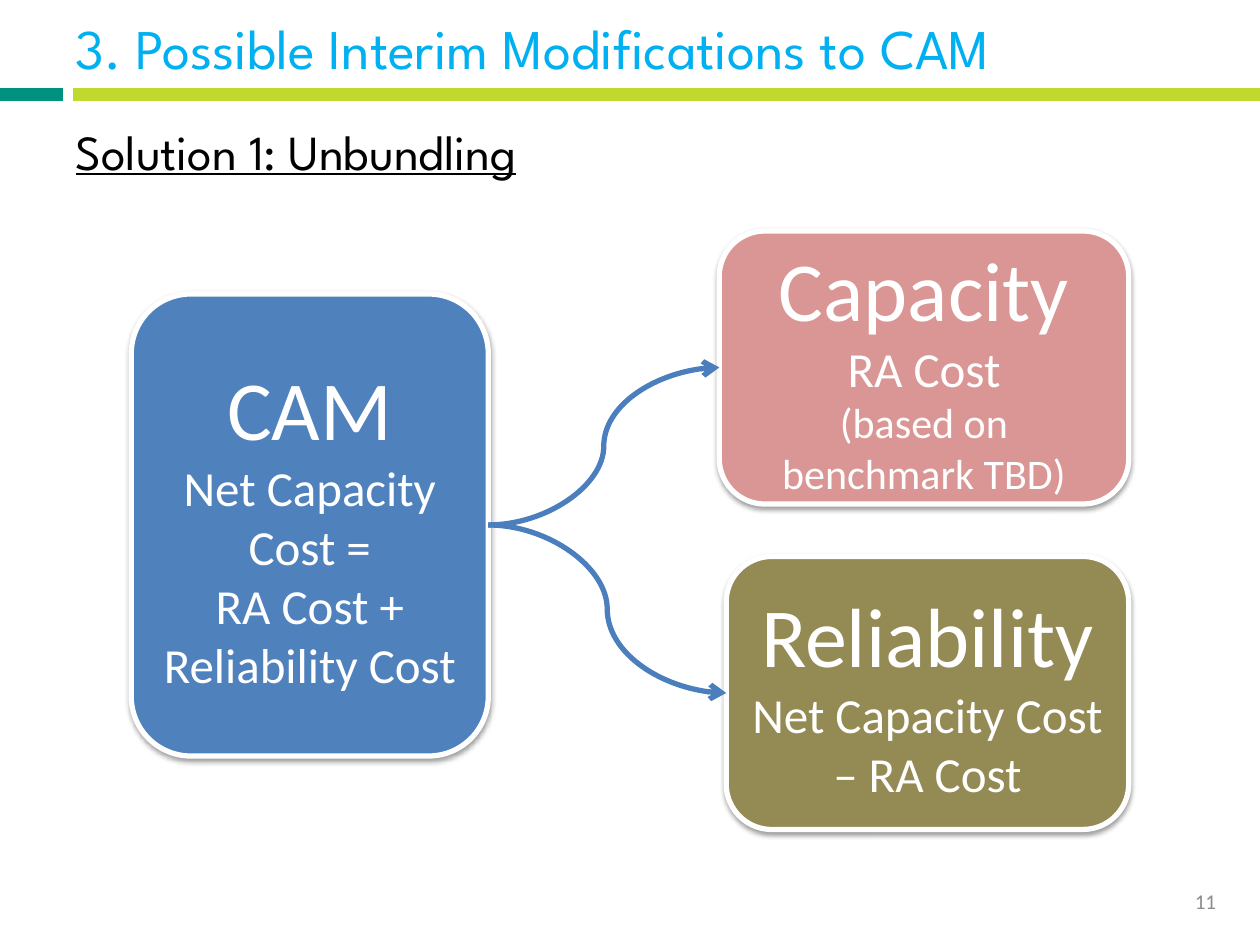
from dataclasses import dataclass

import lxml.etree
import pptx
import pptx.dml.color
import pptx.enum.shapes
import pptx.enum.text
import pptx.oxml
import pptx.oxml.ns
import pptx.util

Pt = pptx.util.Pt
qn = pptx.oxml.ns.qn
ALIGN = pptx.enum.text.PP_ALIGN
ANCHOR = pptx.enum.text.MSO_ANCHOR
CONNECTOR = pptx.enum.shapes.MSO_CONNECTOR
HEADING_FONT = "League Spartan"
WHITE = "FFFFFF"
RIGHT_SITE, LEFT_SITE = 3, 1  # connection sites of a rounded rectangle


@dataclass
class Rule:
    start: float
    end: float
    color: str


@dataclass
class CostBox:
    left: float
    top: float
    width: float
    height: float
    color: str
    lines: list[tuple[str, float]]


def rgb(color: str) -> pptx.dml.color.RGBColor:
    return pptx.dml.color.RGBColor.from_string(color)


def place(shape, left: float, top: float, width: float, height: float) -> None:
    shape.left, shape.top = Pt(left), Pt(top)
    shape.width, shape.height = Pt(width), Pt(height)


def write(paragraph, text: str, *, size: float, color: str, font: str = "Calibri",
          align=ALIGN.LEFT, underline: bool = False) -> None:
    run = paragraph.add_run()
    run.text = text
    run.font.size = Pt(size)
    run.font.name = font
    run.font.color.rgb = rgb(color)
    if underline:
        run.font.underline = True
    paragraph.alignment = align


def add_shadow(shape) -> None:
    """Soft dark shadow straight below the shape."""
    shape.shadow.inherit = False
    effects = shape._element.spPr.find(qn("a:effectLst"))
    shadow = lxml.etree.SubElement(
        effects, qn("a:outerShdw"), blurRad=str(Pt(3.1)), dist=str(Pt(1.6)),
        dir="5400000", rotWithShape="0")
    black = lxml.etree.SubElement(shadow, qn("a:srgbClr"), val="000000")
    lxml.etree.SubElement(black, qn("a:alpha"), val="38000")


def add_line(slide, kind, start: tuple[float, float], end: tuple[float, float],
             color: str, width: float):
    line = slide.shapes.add_connector(kind, *map(Pt, start + end))
    line.line.color.rgb = rgb(color)
    line.line.width = Pt(width)
    lxml.etree.SubElement(line._element.spPr, qn("a:effectLst"))
    return line


def add_cost_box(slide, box: CostBox):
    shape = slide.shapes.add_shape(
        pptx.enum.shapes.MSO_SHAPE.ROUNDED_RECTANGLE,
        Pt(box.left), Pt(box.top), Pt(box.width), Pt(box.height))
    shape.fill.solid()
    shape.fill.fore_color.rgb = rgb(box.color)
    shape.line.color.rgb = rgb(WHITE)
    shape.line.width = Pt(3)
    add_shadow(shape)
    frame = shape.text_frame
    frame.word_wrap = True
    frame.vertical_anchor = ANCHOR.MIDDLE
    for index, (text, size) in enumerate(box.lines):
        paragraph = frame.add_paragraph() if index else frame.paragraphs[0]
        write(paragraph, text, size=size, color=WHITE, align=ALIGN.CENTER)
    return shape


def add_arrow(slide, source: CostBox, source_shape, target: CostBox, target_shape) -> None:
    arrow = add_line(
        slide, CONNECTOR.CURVE,
        (source.left + source.width, source.top + source.height / 2),
        (target.left, target.top + target.height / 2), "4B7EBC", 3)
    arrow.begin_connect(source_shape, RIGHT_SITE)
    arrow.end_connect(target_shape, LEFT_SITE)
    lxml.etree.SubElement(arrow.line._get_or_add_ln(), qn("a:tailEnd"), type="arrow")


RULES = [Rule(0, 36, "00927E"), Rule(42, 720, "C1D82F")]

CAM = CostBox(75, 168, 204, 264, "4F81BD", [
    ("CAM", 48), ("Net Capacity Cost =", 28), ("RA Cost + Reliability Cost", 28)])
PARTS = [
    CostBox(411, 132, 234, 156, "D99694", [
        ("Capacity", 48), ("RA Cost", 28), ("(based on benchmark TBD)", 24)]),
    CostBox(415, 318, 230, 156, "948A54", [
        ("Reliability", 48), ("Net Capacity Cost", 28), ("– RA Cost", 28)]),
]


def main() -> None:
    deck = pptx.Presentation()
    deck.slide_width, deck.slide_height = Pt(720), Pt(540)
    slide = deck.slides.add_slide(deck.slide_layouts[1])

    # Two-colour rule under the title
    for rule in RULES:
        add_line(slide, CONNECTOR.STRAIGHT, (rule.start, 54), (rule.end, 54), rule.color, 8)

    # Title
    title = slide.shapes.title
    place(title, 36, -18, 672, 90)
    title.text_frame.vertical_anchor = ANCHOR.MIDDLE
    write(title.text_frame.paragraphs[0], "3. Possible Interim Modifications to CAM",
          size=32, color="00B0F0", font=HEADING_FONT)

    # Subheading without bullet
    body = slide.placeholders[1]
    place(body, 36, 66, 648, 390)
    subheading = body.text_frame.paragraphs[0]
    write(subheading, "Solution 1: Unbundling", size=28, color="000000",
          font=HEADING_FONT, underline=True)
    subheading.space_after = Pt(12)
    properties = subheading._p.get_or_add_pPr()
    properties.set("marL", "0")
    properties.set("indent", "0")
    lxml.etree.SubElement(properties, qn("a:buNone"))

    # Page number
    number = slide.shapes.add_textbox(Pt(534), Pt(500.5), Pt(168), Pt(28.75))
    number.text_frame.word_wrap = True
    number.text_frame.vertical_anchor = ANCHOR.MIDDLE
    write(number.text_frame.paragraphs[0], "11", size=12, color="8C8C8C", align=ALIGN.RIGHT)

    # CAM cost split into its two parts
    cam_shape = add_cost_box(slide, CAM)
    part_shapes = [add_cost_box(slide, part) for part in PARTS]
    for part, part_shape in zip(PARTS, part_shapes):
        add_arrow(slide, CAM, cam_shape, part, part_shape)

    deck.save("out.pptx")


if __name__ == "__main__":
    main()
